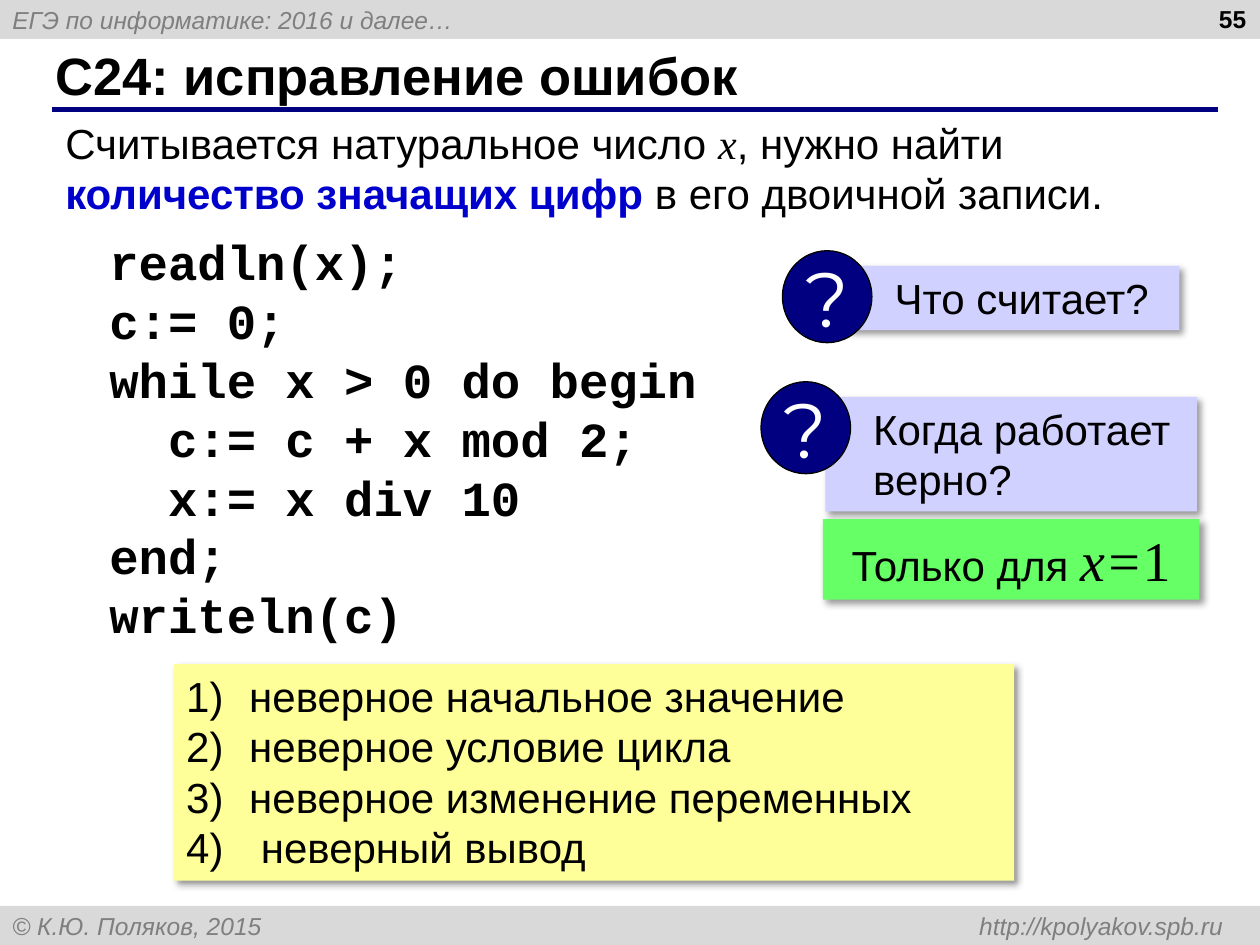
import pptx
import pptx.dml.color
import pptx.enum.shapes
import pptx.enum.text
import pptx.oxml
import pptx.oxml.ns
import pptx.util
from pptx.util import Inches

COLORS = {
    "bar": "D9D9D9", "bar_text": "7F7F7F", "navy": "000080", "black": "000000",
    "white": "FFFFFF", "emphasis": "0000CC", "question": "D1D1FF",
    "answer": "66FF66", "list": "FFFF99",
}
SHAPES = pptx.enum.shapes.MSO_SHAPE
ALIGN = pptx.enum.text.PP_ALIGN
ANCHOR = pptx.enum.text.MSO_ANCHOR
NAMESPACE = pptx.oxml.ns.nsdecls("a")
SHADOW = (
    f'<a:effectLst {NAMESPACE}><a:outerShdw blurRad="50800" dist="38100" dir="2700000" '
    'algn="tl" rotWithShape="0"><a:srgbClr val="000000"><a:alpha val="40000"/>'
    "</a:srgbClr></a:outerShdw></a:effectLst>"
)
CODE = ["readln(x);", "c:= 0;", "while x > 0 do begin", "  c:= c + x mod 2;",
        "  x:= x div 10", "end;", "writeln(c)"]
MISTAKES = ["неверное начальное значение", "неверное условие цикла",
            "неверное изменение переменных", " неверный вывод"]


def rgb(name):
    """Return the named colour."""
    return pptx.dml.color.RGBColor.from_string(COLORS[name])


def write(shape, paragraphs, align=ALIGN.LEFT, anchor=ANCHOR.TOP, wrap=True,
          left=0.1, **base):
    """Fill a shape with paragraphs, each a string or a list of (text, format) runs."""
    frame = shape.text_frame
    frame.word_wrap = wrap
    frame.vertical_anchor = anchor
    frame.margin_left = Inches(left)
    for index, content in enumerate(paragraphs):
        paragraph = frame.paragraphs[0] if index == 0 else frame.add_paragraph()
        paragraph.alignment = align
        runs = [(content, {})] if isinstance(content, str) else content
        for text, changes in runs:
            style = {"size": 24, "font": "Arial", "color": "black", "bold": False,
                     "italic": False, **base, **changes}
            run = paragraph.add_run()
            run.text = text
            run.font.size = pptx.util.Pt(style["size"])
            run.font.name = style["font"]
            run.font.bold = style["bold"]
            run.font.italic = style["italic"]
            run.font.color.rgb = rgb(style["color"])
    return frame


def add_box(shapes, box, color, kind=SHAPES.RECTANGLE, shadow=False):
    """Add a filled shape without an outline, with an optional soft shadow."""
    shape = shapes.add_shape(kind, *map(Inches, box))
    shape.fill.solid()
    shape.fill.fore_color.rgb = rgb(color)
    shape.line.fill.background()
    shape.shadow.inherit = False
    if shadow:
        properties = shape._element.spPr
        properties.remove(properties.find(pptx.oxml.ns.qn("a:effectLst")))
        properties.append(pptx.oxml.parse_xml(SHADOW))
    return shape


def add_text(slide, box, paragraphs, **style):
    """Add a text box."""
    return write(slide.shapes.add_textbox(*map(Inches, box)), paragraphs, **style)


def add_bar(slide, box, text, tab=None):
    """Add a grey page bar, with an optional right tab stop."""
    frame = write(add_box(slide.shapes, box, "bar"), [text], anchor=ANCHOR.MIDDLE,
                  size=14, color="bar_text", italic=True)
    if tab:
        properties = frame.paragraphs[0]._p.get_or_add_pPr()
        properties.append(pptx.oxml.parse_xml(
            f'<a:tabLst {NAMESPACE}><a:tab pos="{Inches(tab)}" algn="r"/></a:tabLst>'))


def add_title(slide, box, text):
    """Place the title and the rule below it."""
    left, top, width, height = box
    title = slide.shapes.title
    title.left, title.top, title.width, title.height = map(Inches, box)
    write(title, [text], anchor=ANCHOR.MIDDLE, size=30, bold=True)
    rule_top = Inches(top + height + 0.02)
    rule = slide.shapes.add_connector(
        pptx.enum.shapes.MSO_CONNECTOR.STRAIGHT,
        Inches(left + 0.07), rule_top, Inches(left + width + 0.17), rule_top)
    rule.line.color.rgb = rgb("navy")
    rule.line.width = pptx.util.Pt(3)
    rule._element.spPr.append(pptx.oxml.parse_xml(f"<a:effectLst {NAMESPACE}/>"))


def add_question(slide, box, text):
    """Add a question panel with a round mark over its upper left corner."""
    left, top, width, height = box
    group = slide.shapes.add_group_shape()
    panel = add_box(group.shapes, box, "question", shadow=True)
    write(panel, [text], left=0.38)
    mark = add_box(group.shapes, (left - 0.51, top - 0.12, 0.71, 0.73), "navy",
                   kind=SHAPES.OVAL)
    mark.line.color.rgb = rgb("black")
    mark.line.width = pptx.util.Pt(0.75)
    write(mark, ["?"], align=ALIGN.CENTER, anchor=ANCHOR.MIDDLE, wrap=False,
          size=44, font="Montserrat", color="white")


def add_numbered_list(slide, box, items):
    """Add a panel with an automatically numbered list."""
    frame = write(add_box(slide.shapes, box, "list", shadow=True), items)
    for paragraph in frame.paragraphs:
        properties = paragraph._p.get_or_add_pPr()
        properties.set("marL", str(Inches(0.5)))
        properties.set("indent", str(Inches(-0.5)))
        properties.append(pptx.oxml.parse_xml(
            f'<a:buAutoNum {NAMESPACE} type="arabicParenR"/>'))


def build():
    """Build and save the presentation."""
    presentation = pptx.Presentation()
    presentation.slide_width, presentation.slide_height = Inches(10), Inches(7.5)
    slide = presentation.slides.add_slide(presentation.slide_layouts[5])
    add_bar(slide, (0, 0, 10, 0.31), "ЕГЭ по информатике: 2016 и далее…")
    add_bar(slide, (0, 7.19, 10, 0.31),
            "© К.Ю. Поляков, 2015 \thttp://kpolyakov.spb.ru", tab=9.61)
    add_title(slide, (0.34, 0.33, 9.16, 0.52), "C24: исправление ошибок")
    add_text(slide, (7.66, -0.02, 2.33, 0.52), ["55"], align=ALIGN.RIGHT,
             size=14, bold=True)
    add_text(slide, (0.42, 0.88, 9.24, 0.91), [[
        ("Считывается натуральное число ", {}),
        ("x", {"font": "Times New Roman", "italic": True}),
        (", нужно найти ", {}),
        ("количество значащих цифр ", {"color": "emphasis", "bold": True}),
        ("в его двоичной записи.", {}),
    ]])
    add_text(slide, (0.77, 1.79, 5.53, 3.4), CODE, size=28, font="Courier New", bold=True)
    add_question(slide, (6.72, 2.11, 2.64, 0.51), "Что считает?")
    add_question(slide, (6.55, 3.15, 2.95, 0.91), "Когда работает верно?")
    answer = add_box(slide.shapes, (6.53, 4.12, 2.99, 0.64), "answer", shadow=True)
    formula = {"font": "Times New Roman", "size": 32}
    write(answer, [[("Только для ", {}), ("x=", {**formula, "italic": True}),
                    ("1", formula)]], align=ALIGN.CENTER)
    add_numbered_list(slide, (1.38, 5.27, 6.67, 1.72), MISTAKES)
    presentation.save("out.pptx")


if __name__ == "__main__":
    build()
